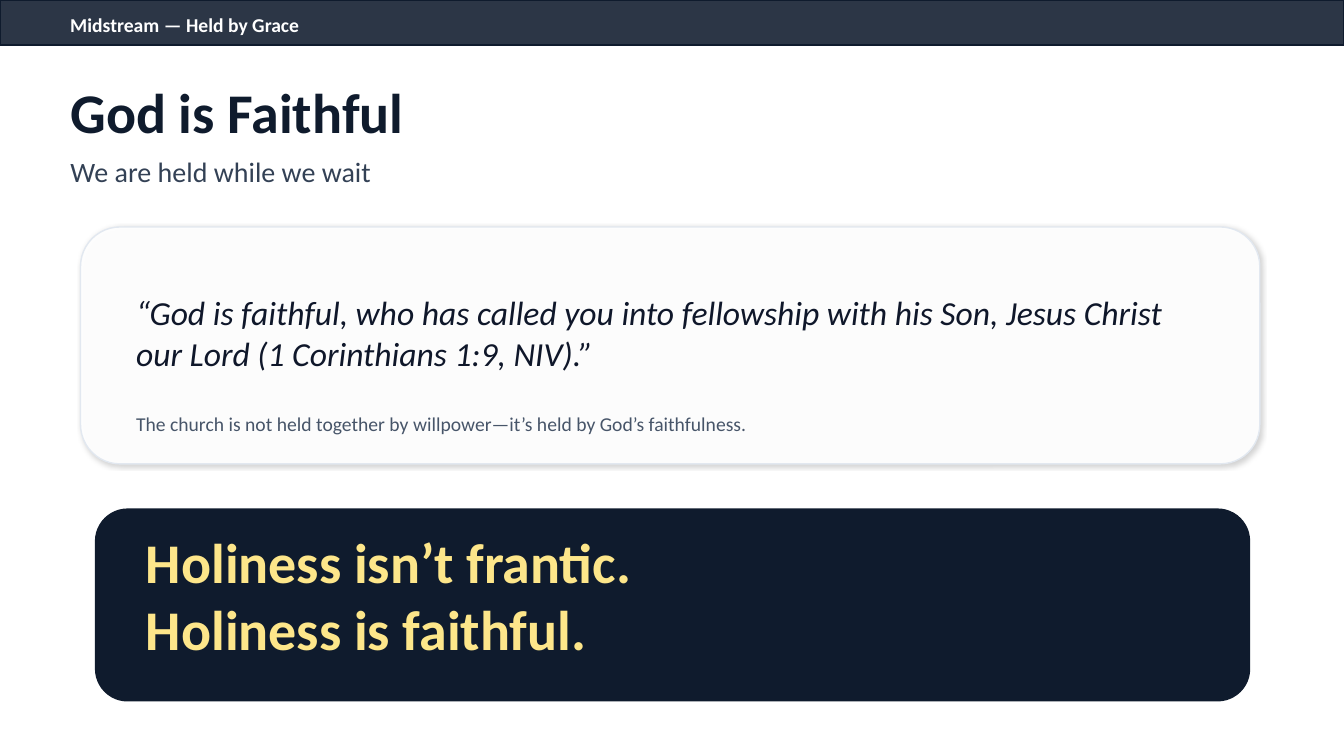
from lxml.etree import SubElement
from pptx import Presentation
from pptx.dml.color import RGBColor
from pptx.enum.shapes import MSO_SHAPE
from pptx.enum.text import MSO_ANCHOR, MSO_AUTO_SIZE, PP_ALIGN
from pptx.oxml.ns import qn
from pptx.util import Cm, Pt

WIDTH, HEIGHT = 33.87, 19.05
NAVY = "0F1B2D"
MARGIN, CARD_TEXT_LEFT, CARD_TEXT_WIDTH = 1.52, 3.18, 27.43

TITLE = (["God is Faithful"], (MARGIN, 1.78, 30.73, 2.03),
         {"size": Pt(40), "bold": True}, NAVY)
SUBTITLE = (["We are held while we wait"], (MARGIN, 3.68, 30.73, 1.27),
            {"size": Pt(20)}, "334155")
TEXTS = [
    (["Midstream — Held by Grace"], (MARGIN, 0.23, 30.99, 0.76),
     {"size": Pt(14), "bold": True}, "FFFFFF"),
    (["“God is faithful, who has called you into fellowship with his Son, "
      "Jesus Christ our Lord (1 Corinthians 1:9, NIV).”"],
     (CARD_TEXT_LEFT, 6.6, CARD_TEXT_WIDTH, 3.56),
     {"size": Pt(24), "italic": True}, "0F172A"),
    (["The church is not held together by willpower—it’s held by God’s faithfulness."],
     (CARD_TEXT_LEFT, 10.29, CARD_TEXT_WIDTH, 0.76), {"size": Pt(14)}, "475569"),
    (["Holiness isn’t frantic.", "Holiness is faithful."],
     (3.43, 13.46, 27.05, 3.05), {"size": Pt(40), "bold": True}, "FDE68A"),
]
HEADER = (MSO_SHAPE.RECTANGLE, (0, 0, WIDTH, 1.14), NAVY, NAVY, 88)
QUOTE_CARD = (MSO_SHAPE.ROUNDED_RECTANGLE, (2.03, 5.72, 29.72, 5.97), "FFFFFF", "E2E8F0", 94)
CLOSING_PANEL = (MSO_SHAPE.ROUNDED_RECTANGLE, (2.41, 12.83, 29.08, 4.83), NAVY, NAVY, 100)


def color(value):
    return RGBColor.from_string(value)


def add_alpha(color_element, percent):
    SubElement(color_element, qn("a:alpha"), val=str(percent * 1000))


def add_panel(page, kind, place, fill, line, opacity):
    panel = page.shapes.add_shape(kind, *map(Cm, place))
    panel.shadow.inherit = False
    panel.fill.solid()
    panel.fill.fore_color.rgb = color(fill)
    panel.line.color.rgb = color(line)
    panel.line.width = Pt(1)
    if opacity < 100:
        fill_color = panel._element.spPr.find(qn("a:solidFill")).find(qn("a:srgbClr"))
        add_alpha(fill_color, opacity)
    return panel


def add_shadow(panel):
    effects = panel._element.spPr.find(qn("a:effectLst"))
    shadow = SubElement(effects, qn("a:outerShdw"), blurRad=str(Pt(3)),
                        dist=str(Pt(1.5)), dir=str(45 * 60000), algn="tl", rotWithShape="0")
    add_alpha(SubElement(shadow, qn("a:srgbClr"), val="000000"), 18)


def write_text(box, lines, place, formats, text_color):
    box.left, box.top, box.width, box.height = map(Cm, place)
    frame = box.text_frame
    frame.word_wrap = True
    frame.auto_size = MSO_AUTO_SIZE.NONE
    frame.vertical_anchor = MSO_ANCHOR.MIDDLE
    frame.text = "\n".join(lines)
    for para in frame.paragraphs:
        para.alignment = PP_ALIGN.LEFT
        para.space_before = Pt(0)
        for span in para.runs:
            for name, value in {"name": "Calibri", **formats}.items():
                setattr(span.font, name, value)
            span.font.color.rgb = color(text_color)


def main():
    deck = Presentation()
    deck.slide_width, deck.slide_height = Cm(WIDTH), Cm(HEIGHT)
    page = deck.slides.add_slide(deck.slide_layouts[0])
    write_text(page.shapes.title, *TITLE)
    write_text(page.placeholders[1], *SUBTITLE)
    add_panel(page, *HEADER)
    add_shadow(add_panel(page, *QUOTE_CARD))
    add_panel(page, *CLOSING_PANEL)
    for text in TEXTS:
        write_text(page.shapes.add_textbox(0, 0, 0, 0), *text)
    deck.save("out.pptx")


if __name__ == "__main__":
    main()
